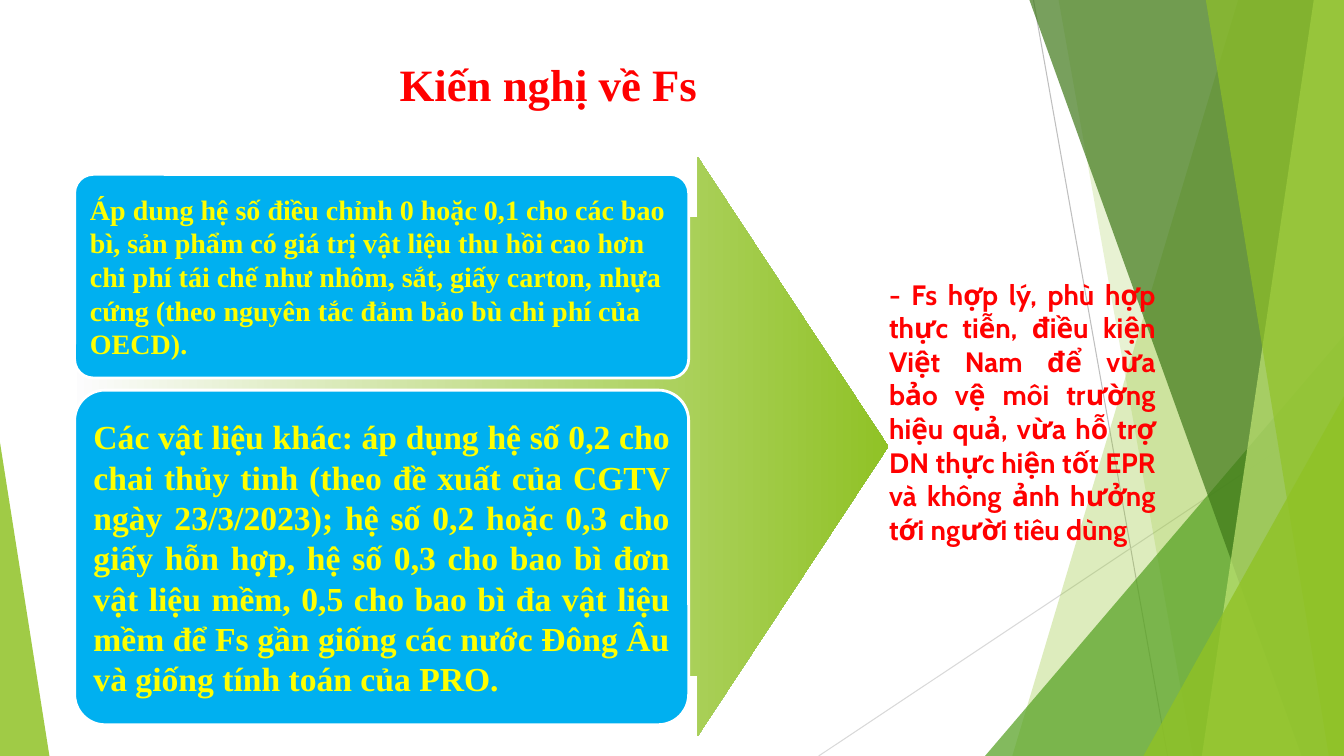
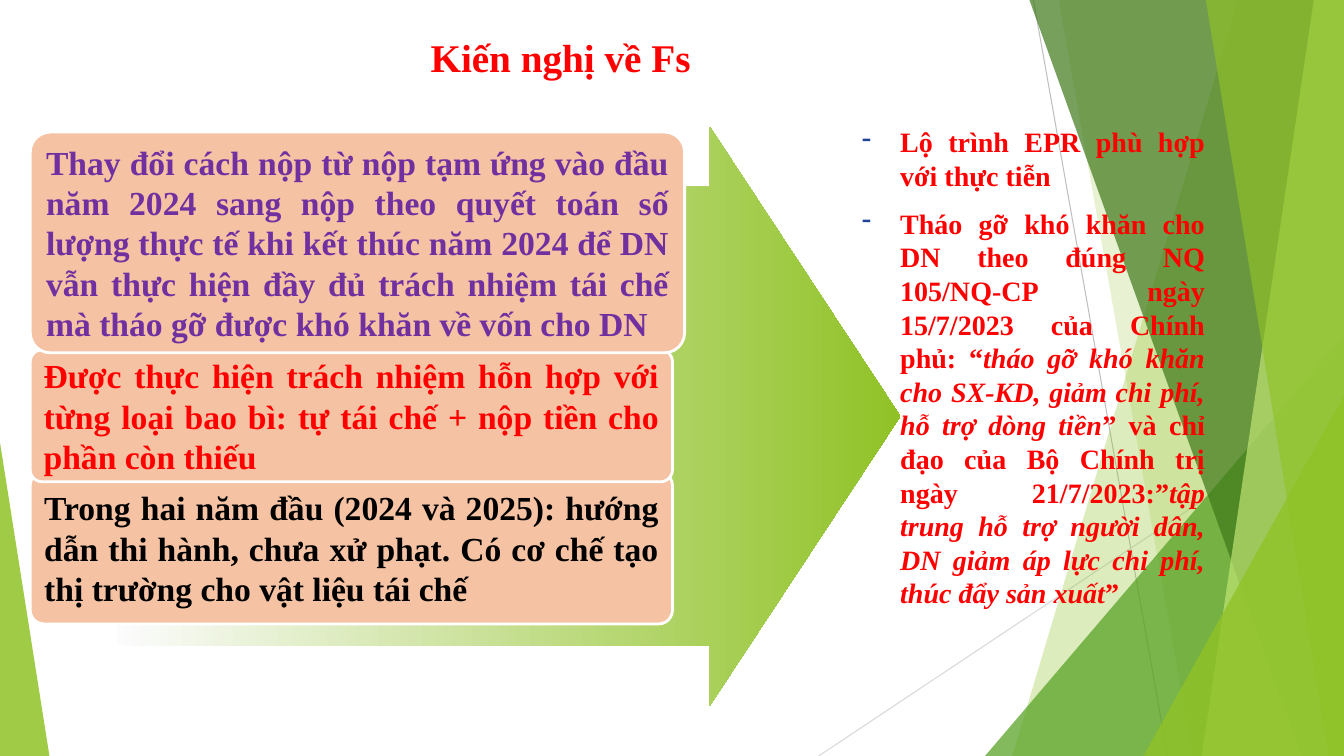
from lxml import etree
from pptx import Presentation
from pptx.dml.color import RGBColor
from pptx.enum import shapes, text
from pptx.oxml import ns
from pptx.util import Inches, Pt

WHITE = RGBColor(0xFF, 0xFF, 0xFF)
BLACK = RGBColor(0x00, 0x00, 0x00)
RED = RGBColor(0xFF, 0x00, 0x00)
YELLOW = RGBColor(0xFF, 0xFF, 0x00)
PURPLE = RGBColor(0x70, 0x30, 0xA0)
BLUE = RGBColor(0x00, 0xB0, 0xF0)
PEACH = RGBColor(0xF5, 0xC2, 0xA3)
NAVY = RGBColor(0x20, 0x42, 0x99)
PALE = RGBColor(0xFC, 0xFC, 0xFD)
LIME = RGBColor(0x90, 0xC2, 0x26)
LIGHT_LIME = RGBColor(0xC0, 0xE4, 0x74)
GREEN = RGBColor(0x54, 0xA0, 0x21)
DARK_GREEN = RGBColor(0x3F, 0x78, 0x19)
GREY = RGBColor(0xBF, 0xBF, 0xBF)
LIGHT_GREY = RGBColor(0xD9, 0xD9, 0xD9)

SERIF = "Times New Roman"
LEFT, CENTER, JUSTIFY = text.PP_ALIGN.LEFT, text.PP_ALIGN.CENTER, text.PP_ALIGN.JUSTIFY
TOP, MIDDLE = text.MSO_ANCHOR.TOP, text.MSO_ANCHOR.MIDDLE
SHAPE = shapes.MSO_SHAPE
WIDTH, HEIGHT = 13.33, 7.5


def write(tf, paragraphs, size=24, font=SERIF, color=RED, align=JUSTIFY,
          anchor=MIDDLE, before=0, spacing=1.0, bullet=None):
    """Fill a frame; each paragraph is a list of runs, every second one italic."""
    tf.word_wrap = True
    tf.vertical_anchor = anchor
    for i, runs in enumerate(paragraphs):
        p = tf.add_paragraph() if i else tf.paragraphs[0]
        p.alignment, p.line_spacing, p.space_before = align, spacing, Pt(before)
        if bullet:
            pPr = p._p.get_or_add_pPr()
            pPr.set("marL", str(Inches(0.38)))
            pPr.set("indent", str(-Inches(0.38)))
            clr = etree.SubElement(pPr, ns.qn("a:buClr"))
            etree.SubElement(clr, ns.qn("a:srgbClr"), val=str(NAVY))
            etree.SubElement(pPr, ns.qn("a:buChar"), char=bullet)
        for j, words in enumerate(runs):
            r = p.add_run()
            r.text = words
            r.font.size, r.font.name, r.font.bold = Pt(size), font, True
            r.font.italic = j % 2 == 1
            r.font.color.rgb = color


def paint(sp, color, alpha=100):
    """Solid fill without outline or shadow, at an opacity in percent."""
    sp.shadow.inherit = False
    sp.line.fill.background()
    sp.fill.solid()
    sp.fill.fore_color.rgb = color
    if alpha < 100:
        clr = sp._element.spPr.find(".//" + ns.qn("a:srgbClr"))
        etree.SubElement(clr, ns.qn("a:alpha"), val=str(alpha * 1000))


# Backdrop: lines, then facets from back to front
LINES = [(10.25, 0, 11.58, HEIGHT, GREY), (WIDTH, 4.03, 8.12, HEIGHT, LIGHT_GREY)]
# band: top x, bottom x (reaching the right edge)
# triangle: left, top, width, apex (standing on the bottom edge)
FACETS = [
    ("band", (12.28, 10.04), LIME, 30),
    ("band", (10.5, 11.83), LIME, 20),
    ("triangle", (9.77, 3.33, 3.56, 1), GREEN, 72),
    ("band", (10.21, 12.91), DARK_GREEN, 70),
    ("band", (13.03, 11.92), LIGHT_LIME, 70),
    ("band", (11.96, 13.18), LIME, 65),
    ("triangle", (11.34, 3.93, 1.99, 1), LIME, 80),
    ("triangle", (0, 4.39, 0.49, 0), LIME, 85),
]

# Slide contents; boxes run from back to front
SLIDES = [
    dict(
        title=(0.74, 0.28, 9.4, 1.16), title_size=32,
        arrow=(0.76, 1.56, 8.05, 5.74),
        body=(8.72, 2.7, 2.84, 2.83), body_format=dict(font="Cabin"),
        body_text=[["- Fs hợp lý, phù hợp thực tiễn, điều kiện Việt Nam để vừa bảo vệ "
                    "môi trường hiệu quả, vừa hỗ trợ DN thực hiện tốt EPR và không ảnh "
                    "hưởng tới người tiêu dùng"]],
        box_fill=BLUE,
        boxes=[
            ((0.74, 1.73, 6.09, 2.02), dict(size=20, color=YELLOW, align=LEFT),
             "Áp dung hệ số điều chỉnh 0 hoặc 0,1 cho các bao bì, sản phẩm có giá trị "
             "vật liệu thu hồi cao hơn chi phí tái chế như nhôm, sắt, giấy carton, "
             "nhựa cứng (theo nguyên tắc đảm bảo bù chi phí của OECD)."),
            ((0.74, 3.87, 6.09, 3.32), dict(color=YELLOW),
             "Các vật liệu khác: áp dụng hệ số 0,2 cho chai thủy tinh (theo đề xuất "
             "của CGTV ngày 23/3/2023); hệ số 0,2 hoặc 0,3 cho giấy hỗn hợp, hệ số 0,3 "
             "cho bao bì đơn vật liệu mềm, 0,5 cho bao bì đa vật liệu mềm để Fs gần "
             "giống các nước Đông Âu và giống tính toán của PRO."),
        ],
    ),
    dict(
        title=(0.86, 0.17, 9.4, 0.85), title_size=28,
        arrow=(1.16, 1.26, 7.77, 5.74),
        body=(8.45, 1.19, 3.6, 3.59), body_format=dict(bullet="-"),
        body_text=[
            ["Lộ trình EPR phù hợp với thực tiễn"],
            ["Tháo gỡ khó khăn cho DN theo đúng NQ 105/NQ-CP ngày 15/7/2023 của "
             "Chính phủ: “",
             "tháo gỡ khó khăn cho SX-KD, giảm chi phí, hỗ trợ dòng tiền",
             "” và chỉ đạo của Bộ Chính trị ngày 21/7/2023:”",
             "tập trung hỗ trợ người dân, DN giảm áp lực chi phí, thúc đẩy sản xuất",
             "”"],
        ],
        box_fill=PEACH,
        boxes=[
            ((0.3, 4.68, 6.37, 1.51), dict(color=BLACK),
             "Trong hai năm đầu (2024 và 2025): hướng dẫn thi hành, chưa xử phạt. "
             "Có cơ chế tạo thị trường cho vật liệu tái chế"),
            ((0.3, 3.47, 6.37, 1.31), dict(color=RED),
             "Được thực hiện trách nhiệm hỗn hợp với từng loại bao bì: tự tái chế + "
             "nộp tiền cho phần còn thiếu"),
            ((0.3, 1.31, 6.49, 2.19), dict(color=PURPLE),
             "Thay đổi cách nộp từ nộp tạm ứng vào đầu năm 2024 sang nộp theo quyết "
             "toán số lượng thực tế khi kết thúc năm 2024 để DN vẫn thực hiện đầy đủ "
             "trách nhiệm tái chế mà tháo gỡ được khó khăn về vốn cho DN"),
        ],
    ),
]

prs = Presentation()
prs.slide_width, prs.slide_height = Inches(WIDTH), Inches(HEIGHT)

for content in SLIDES:
    s = prs.slides.add_slide(prs.slide_layouts[6])

    # Backdrop
    for *ends, color in LINES:
        ln = s.shapes.add_connector(shapes.MSO_CONNECTOR.STRAIGHT, *map(Inches, ends))
        ln.line.color.rgb, ln.line.width = color, Pt(0.75)
        etree.SubElement(ln._element.spPr, ns.qn("a:effectLst"))
    for kind, place, color, alpha in FACETS:
        if kind == "band":
            x_top, x_bottom = place
            fb = s.shapes.build_freeform(Inches(x_top), 0)
            corners = [(WIDTH, 0), (WIDTH, HEIGHT), (x_bottom, HEIGHT)]
            fb.add_line_segments([(Inches(x), Inches(y)) for x, y in corners])
            sp = fb.convert_to_shape()
        else:
            x, y, w, apex = place
            sp = s.shapes.add_shape(SHAPE.ISOSCELES_TRIANGLE, Inches(x), Inches(y),
                                    Inches(w), Inches(HEIGHT - y))
            sp.adjustments[0] = apex
        paint(sp, color, alpha)

    # Title and conclusion
    sp = s.shapes.add_textbox(*map(Inches, content["title"]))
    write(sp.text_frame, [["Kiến nghị về Fs"]], size=content["title_size"],
          align=CENTER, spacing=0.9)
    sp = s.shapes.add_textbox(*map(Inches, content["body"]))
    write(sp.text_frame, content["body_text"], size=20, anchor=TOP, before=10,
          **content["body_format"])

    # Gradient arrow behind the boxes
    sp = s.shapes.add_shape(SHAPE.RIGHT_ARROW, *map(Inches, content["arrow"]))
    sp.adjustments[0], sp.adjustments[1] = 0.793, 0.329
    sp.shadow.inherit = False
    sp.line.fill.background()
    sp.fill.gradient()
    sp.fill.gradient_angle = 0
    for stop, color in zip(sp.fill.gradient_stops, (PALE, LIME)):
        stop.color.rgb = color

    # Proposal boxes
    for place, style, words in content["boxes"]:
        sp = s.shapes.add_shape(SHAPE.ROUNDED_RECTANGLE, *map(Inches, place))
        sp.adjustments[0] = 0.091
        paint(sp, content["box_fill"])
        sp.line.color.rgb, sp.line.width = WHITE, Pt(2)
        write(sp.text_frame, [[words]], **style)

prs.save("out.pptx")
